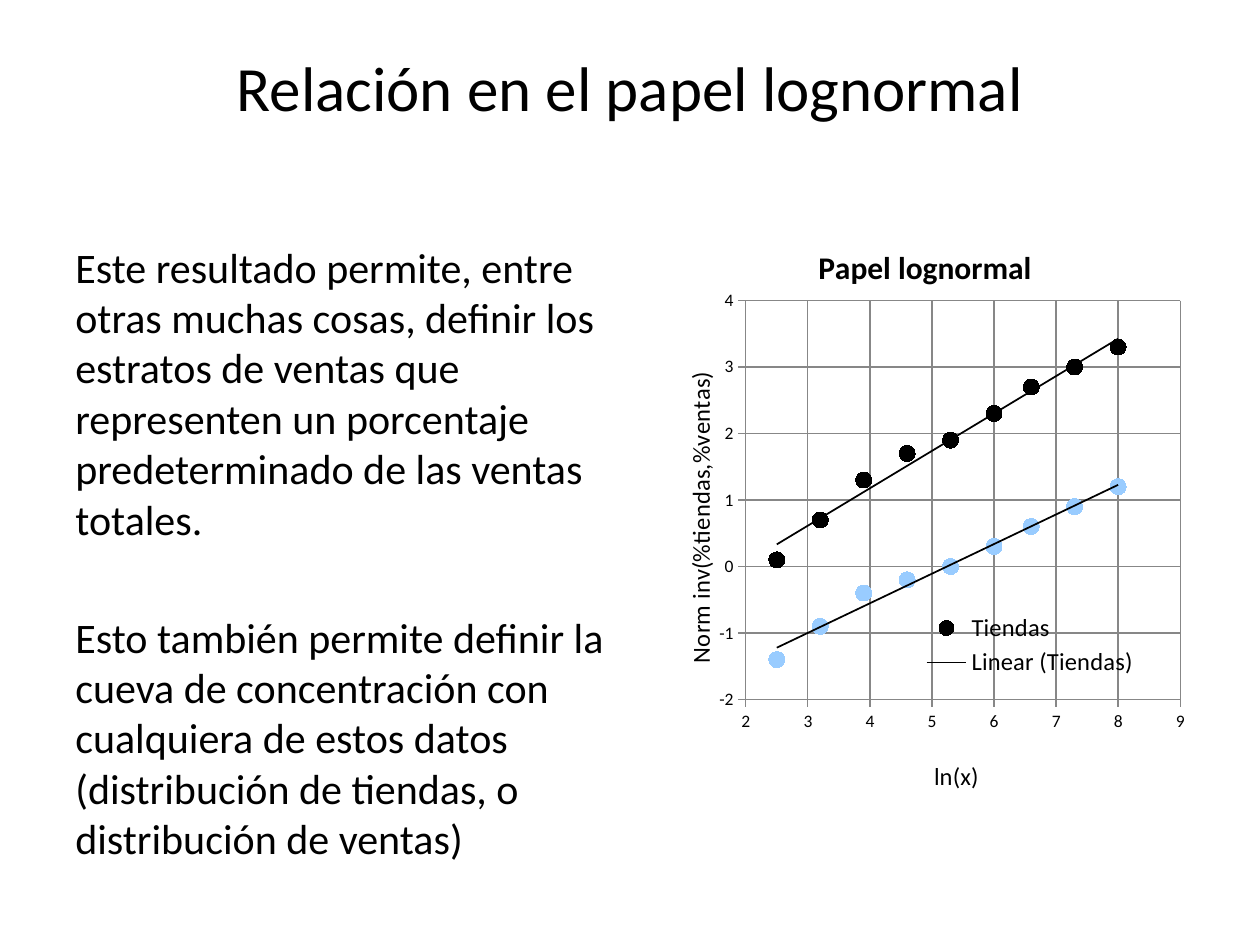
import pptx
import pptx.chart.data
import pptx.dml.color
import pptx.enum.chart
import pptx.enum.text
import pptx.oxml
import pptx.oxml.ns
import pptx.util

Cm, Pt = pptx.util.Cm, pptx.util.Pt
RGB = pptx.dml.color.RGBColor
enum = pptx.enum.chart
qn = pptx.oxml.ns.qn

# Content
TITLE = "Relación en el papel lognormal"
BODY = [
    "Este resultado permite, entre otras muchas cosas, definir los estratos de "
    "ventas que representen un porcentaje predeterminado de las ventas totales.",
    "Esto también permite definir la cueva de concentración con cualquiera de "
    "estos datos (distribución de tiendas, o distribución de ventas)",
]
BLACK = RGB(0, 0, 0)
BLUE = RGB(0x99, 0xCC, 0xFF)
GRAY = RGB(0x87, 0x87, 0x87)
LN_X = [2.5, 3.2, 3.9, 4.6, 5.3, 6, 6.6, 7.3, 8]
SERIES = [
    ("Tiendas", BLACK, [0.1, 0.7, 1.3, 1.7, 1.9, 2.3, 2.7, 3, 3.3]),
    ("Ventas totales", BLUE, [-1.4, -0.9, -0.4, -0.2, 0, 0.3, 0.6, 0.9, 1.2]),
]
HIDDEN = [1, 3]  # legend entries of the second series and its trend
# Axis title, its place in the chart, and the scale
AXES = {
    "category_axis": ("ln(x)", (0.52, 0.91), 2, 9),
    "value_axis": ("Norm inv(%tiendas,%ventas)", (0.07, 0.27), -2, 4),
}


def put(obj, vals):
    for key, val in vals.items():
        setattr(obj, key, val)


def style(font, size, bold=False):
    put(font, {"name": "Calibri", "size": Pt(size), "bold": bold})
    font.color.rgb = BLACK


def node(xml):
    head, tail = xml.split(">", 1)
    slash = "/" if head.endswith("/") else ""
    head = head.rstrip("/")
    return pptx.oxml.parse_xml(
        f"{head} {pptx.oxml.ns.nsdecls('c', 'a')}{slash}>{tail}")


def place(elem, spot, after=None, inner=False):
    """Give a chart part a fixed place, in fractions of the chart."""
    for old in elem.findall(qn("c:layout")):
        elem.remove(old)
    xml = '<c:layoutTarget val="inner"/>' if inner else ""
    keys = "xywh"[:len(spot)]
    xml += "".join(f'<c:{k}Mode val="edge"/>' for k in "xy")
    xml += "".join(f'<c:{k} val="{v}"/>' for k, v in zip(keys, spot))
    lay = node(f"<c:layout><c:manualLayout>{xml}</c:manualLayout></c:layout>")
    if after is None:
        elem.insert(0, lay)
    else:
        elem.findall(qn(after))[-1].addnext(lay)


def head(part, text, size, bold, spot):
    """Write and place a chart or axis title."""
    part.has_title = True
    title = part.chart_title if hasattr(part, "chart_title") else part.axis_title
    title.text_frame.text = text
    style(title.text_frame.paragraphs[0].runs[0].font, size, bold)
    place(title._element, spot, "c:tx")


# Slide and title
deck = pptx.Presentation()
put(deck, {"slide_width": Cm(25.4), "slide_height": Cm(19.05)})
slide = deck.slides.add_slide(deck.slide_layouts[5])
title = slide.shapes.title
put(title, {"left": Cm(1.27), "top": Cm(0.76), "width": Cm(22.86), "height": Cm(1.96)})
title.text_frame.text = TITLE
title.text_frame.vertical_anchor = pptx.enum.text.MSO_ANCHOR.MIDDLE
para = title.text_frame.paragraphs[0]
para.alignment = pptx.enum.text.PP_ALIGN.CENTER
style(para.runs[0].font, 36)

# Body text
box = slide.shapes.add_textbox(Cm(1.27), Cm(3.53), Cm(11.23), Cm(13.49))
frame = box.text_frame
put(frame, {"word_wrap": True, "margin_left": Cm(0.25), "margin_right": Cm(0.25),
            "margin_top": Cm(1.33)})
for i, text in enumerate(BODY):
    para = frame.add_paragraph() if i else frame.paragraphs[0]
    para.space_before = Pt(38.6 if i else 0)
    run = para.add_run()
    run.text = text
    style(run.font, 24)

# Chart
data = pptx.chart.data.XyChartData()
for name, hue, vals in SERIES:
    row = data.add_series(name)
    for x, y in zip(LN_X, vals):
        row.add_data_point(x, y)
chart = slide.shapes.add_chart(
    enum.XL_CHART_TYPE.XY_SCATTER, Cm(12.9), Cm(4.11), Cm(11.23), Cm(12.19), data).chart
style(chart.font, 10)
head(chart, "Papel lognormal", 18, True, (0.31, 0.06))
chart.plots[0].vary_by_categories = False
place(chart._chartSpace.chart.plotArea, (0.19, 0.16, 0.78, 0.66), inner=True)

# Markers and trend lines
for row, (name, hue, vals) in zip(chart.plots[0].series, SERIES):
    row.format.line.fill.background()
    put(row.marker, {"style": enum.XL_MARKER_STYLE.CIRCLE, "size": 9})
    row.marker.format.fill.solid()
    row.marker.format.fill.fore_color.rgb = hue
    row.marker.format.line.color.rgb = hue
    row.smooth = False
    row._element.find(qn("c:xVal")).addprevious(node(
        f'<c:trendline><c:name>Linear ({name})</c:name><c:spPr><a:ln w="12700">'
        f'<a:solidFill><a:srgbClr val="{BLACK}"/></a:solidFill></a:ln></c:spPr>'
        '<c:trendlineType val="linear"/><c:dispRSqr val="0"/><c:dispEq val="0"/>'
        '</c:trendline>'))

# Axes
for key, (text, spot, low, high) in AXES.items():
    axis = getattr(chart, key)
    put(axis, {"minimum_scale": low, "maximum_scale": high, "major_unit": 1,
               "has_major_gridlines": True,
               "major_tick_mark": enum.XL_TICK_MARK.OUTSIDE,
               "minor_tick_mark": enum.XL_TICK_MARK.NONE,
               "tick_label_position": enum.XL_TICK_LABEL_POSITION.LOW})
    put(axis.tick_labels, {"number_format": "0", "number_format_is_linked": False})
    style(axis.tick_labels.font, 10)
    for line in (axis.format.line, axis.major_gridlines.format.line):
        line.color.rgb = GRAY
        line.width = Pt(0.75)
    head(axis, text, 14, False, spot)
    # Both axes meet at the lower left corner
    axis.crosses = enum.XL_AXIS_CROSSES.MINIMUM

# Legend over the plot
chart.has_legend = True
legend = chart.legend
put(legend, {"position": enum.XL_LEGEND_POSITION.RIGHT, "include_in_layout": True})
style(legend.font, 14)
spot = legend._element.find(qn("c:legendPos"))
for idx in reversed(HIDDEN):
    spot.addnext(node(f'<c:legendEntry><c:idx val="{idx}"/><c:delete val="1"/></c:legendEntry>'))
place(legend._element, (0.5, 0.67, 0.4, 0.12), "c:legendEntry")

deck.save("out.pptx")
